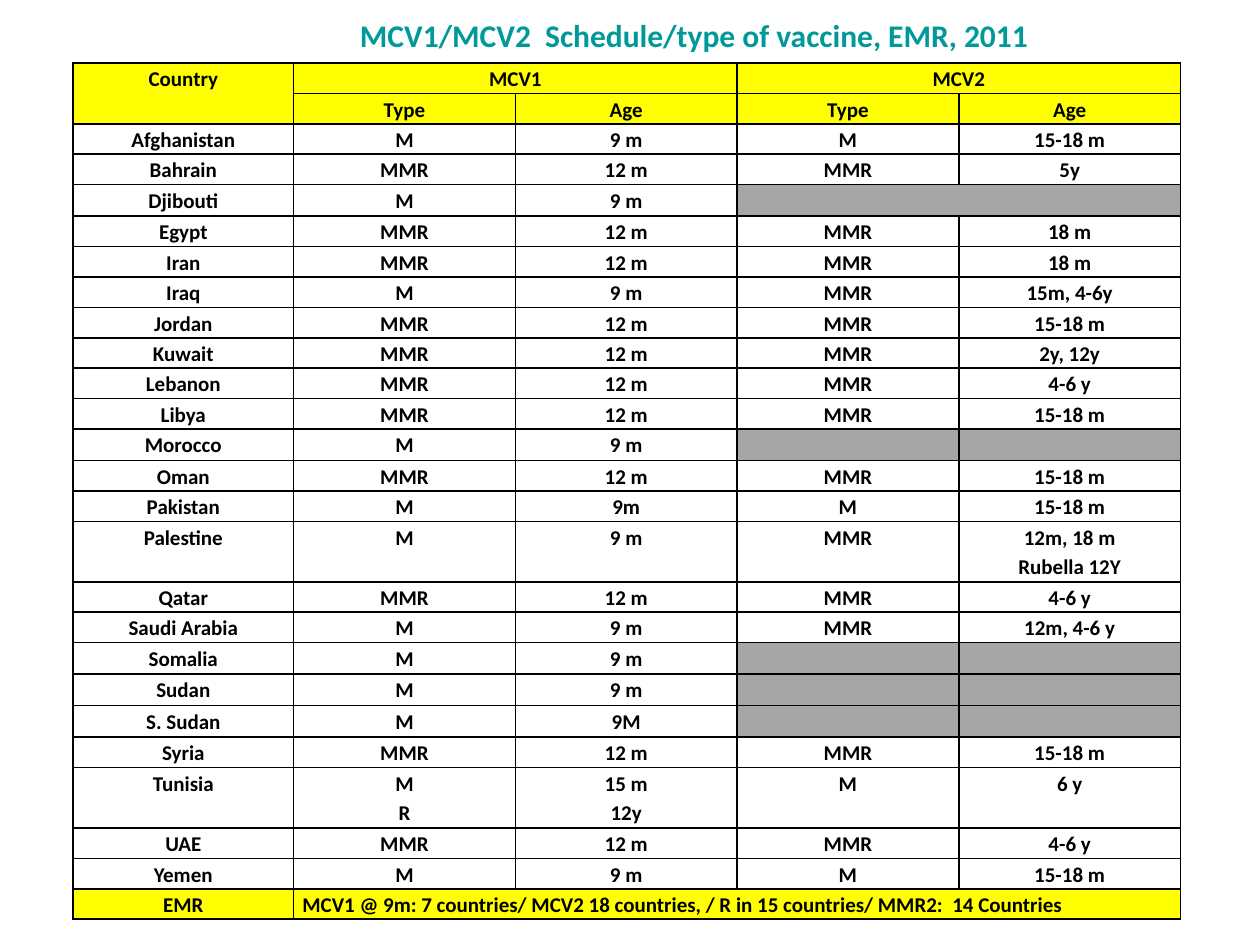
from lxml.etree import SubElement
from pptx import Presentation
from pptx.dml.color import RGBColor
from pptx.enum.text import MSO_ANCHOR, PP_ALIGN
from pptx.oxml.ns import qn
from pptx.util import Inches, Pt

BLACK, WHITE, YELLOW, GREY, TEAL = "000000", "FFFFFF", "FFFF00", "A6A6A6", "009999"

HEADER = [
    ("Country", "MCV1", "", "MCV2", ""),
    ("", "Type", "Age", "Type", "Age"),
]
# Country, MCV1 type and age, MCV2 type and age (left out where there is no second dose)
SCHEDULES = [
    ("Afghanistan", "M", "9 m", "M", "15-18 m"),
    ("Bahrain", "MMR", "12 m", "MMR", "5y"),
    ("Djibouti", "M", "9 m"),
    ("Egypt", "MMR", "12 m", "MMR", "18 m"),
    ("Iran", "MMR", "12 m", "MMR", "18 m"),
    ("Iraq", "M", "9 m", "MMR", "15m, 4-6y"),
    ("Jordan", "MMR", "12 m", "MMR", "15-18 m"),
    ("Kuwait", "MMR", "12 m", "MMR", "2y, 12y"),
    ("Lebanon", "MMR", "12 m", "MMR", "4-6 y"),
    ("Libya", "MMR", "12 m", "MMR", "15-18 m"),
    ("Morocco", "M", "9 m"),
    ("Oman", "MMR", "12 m", "MMR", "15-18 m"),
    ("Pakistan", "M", "9m", "M", "15-18 m"),
    ("Palestine", "M", "9 m", "MMR", "12m, 18 m\nRubella 12Y"),
    ("Qatar", "MMR", "12 m", "MMR", "4-6 y"),
    ("Saudi Arabia", "M", "9 m", "MMR", "12m, 4-6 y"),
    ("Somalia", "M", "9 m"),
    ("Sudan", "M", "9 m"),
    ("S. Sudan", "M", "9M"),
    ("Syria", "MMR", "12 m", "MMR", "15-18 m"),
    ("Tunisia", "M\nR", "15 m\n12y", "M", "6 y"),
    ("UAE", "MMR", "12 m", "MMR", "4-6 y"),
    ("Yemen", "M", "9 m", "M", "15-18 m"),
]
SUMMARY = ("EMR", "MCV1 @ 9m: 7 countries/ MCV2 18 countries, / R in 15 countries/ MMR2:  14 Countries")

COLUMN_WIDTHS = [1.75] + [1.76] * 4
TABLE_HEIGHT = 6.8
GREY_ROW, DOUBLE_ROW = 0.25, 0.48


def rgb(hex_color):
    return RGBColor.from_string(hex_color)


class SlideBuilder:
    font_name = "Calibri"
    cell_size = 12

    def __init__(self, slide):
        self.slide = slide

    def format_runs(self, paragraph, size, color):
        for run in paragraph.runs:
            run.font.name = self.font_name
            run.font.size = Pt(size)
            run.font.bold = True
            run.font.color.rgb = rgb(color)

    def title(self, text, left, top, width, height):
        heading = self.slide.shapes.title
        heading.left, heading.top = Inches(left), Inches(top)
        heading.width, heading.height = Inches(width), Inches(height)
        frame = heading.text_frame
        frame.text = text
        frame.word_wrap = True
        frame.vertical_anchor = MSO_ANCHOR.TOP
        frame.paragraphs[0].alignment = PP_ALIGN.CENTER
        self.format_runs(frame.paragraphs[0], 18, TEAL)

    def table(self, left, top, widths, heights):
        frame = self.slide.shapes.add_table(
            len(heights), len(widths), Inches(left), Inches(top),
            Inches(sum(widths)), Inches(sum(heights)))
        grid = frame.table
        grid.first_row = grid.horz_banding = False
        for column, width in zip(grid.columns, widths):
            column.width = Inches(width)
        for row, height in zip(grid.rows, heights):
            row.height = Inches(height)
        return grid

    def borders(self, cell):
        properties = cell._tc.get_or_add_tcPr()
        for side in ("a:lnL", "a:lnR", "a:lnT", "a:lnB"):
            line = SubElement(properties, qn(side), w=str(Pt(1)))
            fill = SubElement(line, qn("a:solidFill"))
            SubElement(fill, qn("a:srgbClr"), val=BLACK)

    def cell(self, cell, text, fill, align=PP_ALIGN.CENTER):
        self.borders(cell)
        cell.fill.solid()
        cell.fill.fore_color.rgb = rgb(fill)
        cell.margin_left = cell.margin_right = Inches(0.07)
        cell.margin_top = cell.margin_bottom = 0
        cell.text_frame.text = text
        for paragraph in cell.text_frame.paragraphs:
            paragraph.alignment = align
            paragraph.line_spacing = 1.15
            self.format_runs(paragraph, self.cell_size, BLACK)
            if not text:
                # Keep empty cells from stretching their row
                SubElement(paragraph._p, qn("a:endParaRPr"), sz=str(self.cell_size * 100))


def row_heights():
    """Grey and two-line rows have set heights; the rest share what is left."""
    fixed = {}
    for index, schedule in enumerate(SCHEDULES, len(HEADER)):
        if len(schedule) == 3:
            fixed[index] = GREY_ROW
        elif any("\n" in entry for entry in schedule):
            fixed[index] = DOUBLE_ROW
    count = len(HEADER) + len(SCHEDULES) + 1
    plain = (TABLE_HEIGHT - sum(fixed.values())) / (count - len(fixed))
    return [fixed.get(index, plain) for index in range(count)]


def main():
    presentation = Presentation()
    presentation.slide_width, presentation.slide_height = Inches(10), Inches(7.5)
    builder = SlideBuilder(presentation.slides.add_slide(presentation.slide_layouts[5]))

    builder.title("MCV1/MCV2  Schedule/type of vaccine, EMR, 2011", 2.19, 0.08, 6.64, 0.4)
    grid = builder.table(0.58, 0.5, COLUMN_WIDTHS, row_heights())
    last_row = len(grid.rows) - 1

    # Header
    for row, labels in enumerate(HEADER):
        for column, label in enumerate(labels):
            builder.cell(grid.cell(row, column), label, YELLOW)

    # Countries
    for row, schedule in enumerate(SCHEDULES, len(HEADER)):
        for column in range(len(COLUMN_WIDTHS)):
            given = column < len(schedule)
            builder.cell(grid.cell(row, column), schedule[column] if given else "",
                         WHITE if given else GREY)

    # Regional summary
    for column in range(len(COLUMN_WIDTHS)):
        text = SUMMARY[column] if column < len(SUMMARY) else ""
        builder.cell(grid.cell(last_row, column), text, YELLOW,
                     PP_ALIGN.LEFT if column else PP_ALIGN.CENTER)

    # Merged cells: country, both doses, Djibouti's missing dose, summary
    djibouti = len(HEADER) + [schedule[0] for schedule in SCHEDULES].index("Djibouti")
    for start, end in [((0, 0), (1, 0)), ((0, 1), (0, 2)), ((0, 3), (0, 4)),
                       ((djibouti, 3), (djibouti, 4)), ((last_row, 1), (last_row, 4))]:
        grid.cell(*start).merge(grid.cell(*end))

    presentation.save("out.pptx")


if __name__ == "__main__":
    main()
